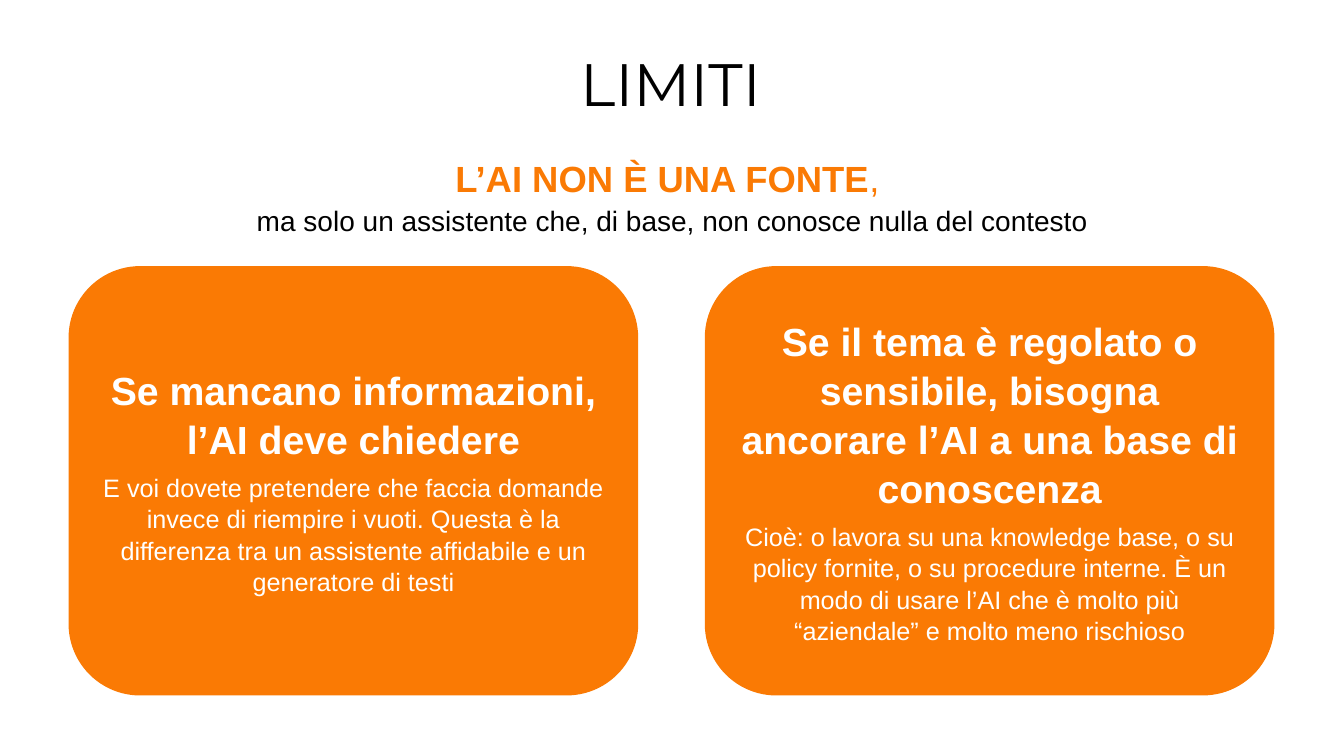
from pptx import Presentation
from pptx.dml.color import RGBColor
from pptx.enum.shapes import MSO_SHAPE
from pptx.enum.text import MSO_ANCHOR, MSO_AUTO_SIZE, PP_ALIGN
from pptx.util import Inches, Pt

ORANGE, WHITE, BLACK = "FA7A04", "FFFFFF", "000000"
TITLE = "LIMITI"
CLAIM = "L’AI NON È UNA FONTE"
CLAIM_END = ", "
CLAIM_DETAIL = "ma solo un assistente che, di base, non conosce nulla del contesto"
CARDS = [
    (
        "Se mancano informazioni, l’AI deve chiedere",
        "E voi dovete pretendere che faccia domande invece di riempire i vuoti. "
        "Questa è la differenza tra un assistente affidabile e un generatore di testi",
    ),
    (
        "Se il tema è regolato o sensibile, bisogna ancorare l’AI a una base di conoscenza",
        "Cioè: o lavora su una knowledge base, o su policy fornite, o su procedure interne. "
        "È un modo di usare l’AI che è molto più “aziendale” e molto meno rischioso",
    ),
]
CARD_LEFT, CARD_TOP, CARD_WIDTH, CARD_HEIGHT, CARD_GAP = 0.68, 2.64, 5.65, 4.26, 0.66


def color(hex_string):
    return RGBColor.from_string(hex_string)


def add_text(paragraph, text, size, fill, bold=False, font="Arial", spacing=1.0, after=0):
    paragraph.alignment = PP_ALIGN.CENTER
    paragraph.line_spacing = spacing
    paragraph.space_before = Pt(0)
    paragraph.space_after = Pt(after)
    run = paragraph.add_run()
    run.text = text
    run.font.name = font
    run.font.size = Pt(size)
    run.font.bold = bold
    run.font.color.rgb = color(fill)


def prepare_frame(shape, anchor=MSO_ANCHOR.TOP, margin=0.0):
    frame = shape.text_frame
    frame.word_wrap = True
    frame.auto_size = MSO_AUTO_SIZE.NONE
    frame.vertical_anchor = anchor
    frame.margin_left = frame.margin_right = Inches(margin)
    frame.margin_top = frame.margin_bottom = Inches(margin / 2)
    return frame


def add_card(slide, index, heading, body):
    left = CARD_LEFT + index * (CARD_WIDTH + CARD_GAP)
    card = slide.shapes.add_shape(
        MSO_SHAPE.ROUNDED_RECTANGLE,
        Inches(left), Inches(CARD_TOP), Inches(CARD_WIDTH), Inches(CARD_HEIGHT),
    )
    card.shadow.inherit = False
    card.fill.solid()
    card.fill.fore_color.rgb = color(ORANGE)
    card.line.fill.background()
    frame = prepare_frame(card, MSO_ANCHOR.MIDDLE, 0.1)
    add_text(frame.paragraphs[0], heading, 28, WHITE, bold=True, spacing=1.04, after=6)
    add_text(frame.add_paragraph(), body, 18, WHITE, spacing=1.04, after=6)


def main():
    presentation = Presentation()
    presentation.slide_width, presentation.slide_height = Inches(13.33), Inches(7.5)
    slide = presentation.slides.add_slide(presentation.slide_layouts[5])

    title = slide.shapes.title
    title.left, title.top = Inches(0.84), Inches(0.6)
    title.width, title.height = Inches(11.62), Inches(0.39)
    title_frame = prepare_frame(title)
    add_text(title_frame.paragraphs[0], TITLE, 42.7, BLACK, font="Montserrat", spacing=0.8)

    claim = slide.shapes.add_textbox(Inches(0.86), Inches(1.51), Inches(11.62), Inches(0.55))
    paragraph = prepare_frame(claim).paragraphs[0]
    add_text(paragraph, CLAIM, 26, ORANGE, bold=True, spacing=1.1)
    add_text(paragraph, CLAIM_END, 26, ORANGE, spacing=1.1)
    paragraph.add_line_break()
    add_text(paragraph, CLAIM_DETAIL, 20, BLACK, spacing=1.1)

    for index, (heading, body) in enumerate(CARDS):
        add_card(slide, index, heading, body)

    presentation.save("out.pptx")


if __name__ == "__main__":
    main()
